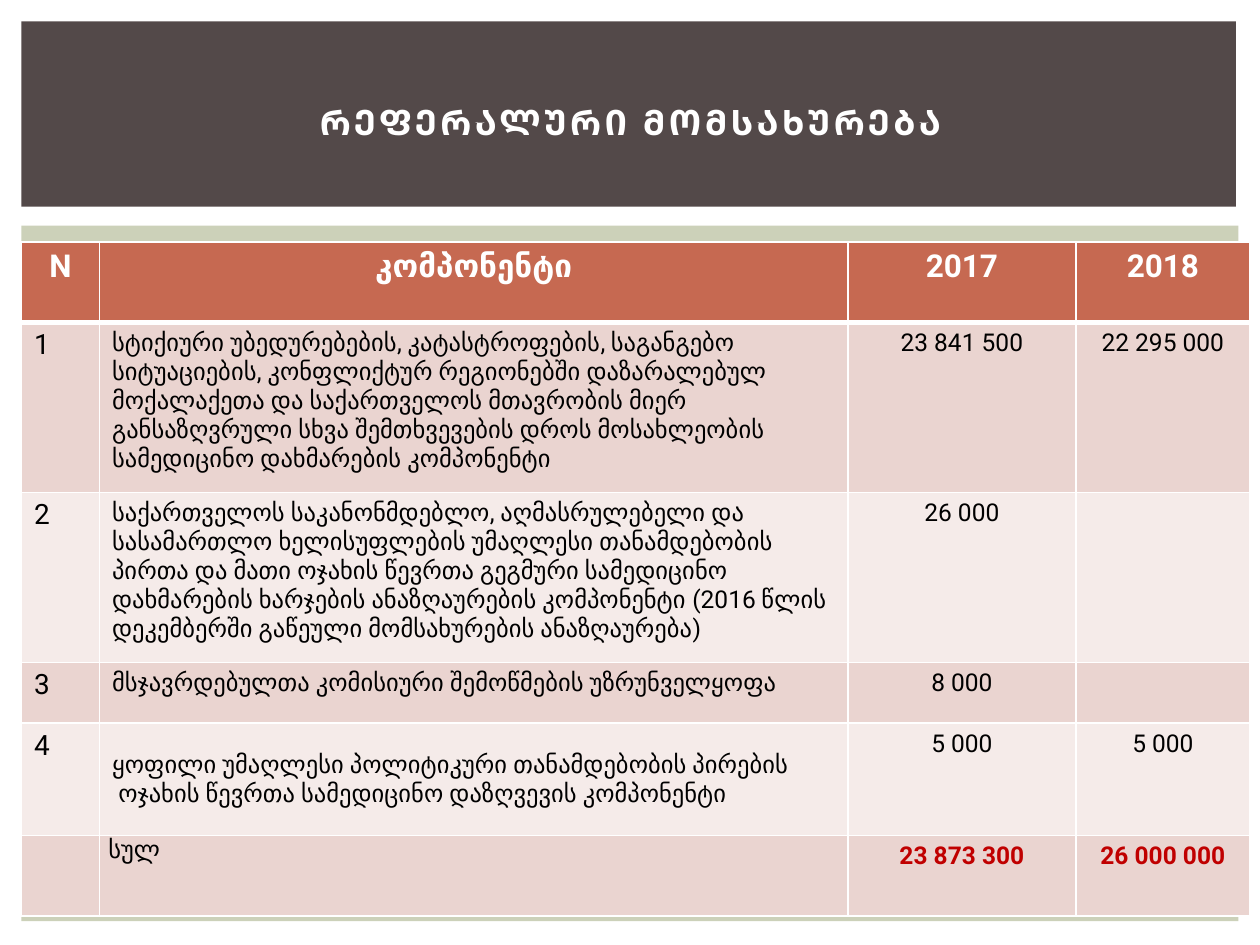
from lxml import etree
from pptx import Presentation, util as u
from pptx.dml.color import RGBColor
from pptx.enum import shapes, text
from pptx.oxml.ns import qn

WHITE = RGBColor(0xFF, 0xFF, 0xFF)
BLACK = RGBColor(0, 0, 0)
DARK = RGBColor(0x53, 0x49, 0x49)
SAGE = RGBColor(0xCC, 0xD1, 0xB9)
RUST = RGBColor(0xC6, 0x69, 0x51)
BANDS = (RGBColor(0xEA, 0xD4, 0xD0), RGBColor(0xF5, 0xEB, 0xE9))
RED = RGBColor(0xC0, 0, 0)
FONT = "Roboto"

COLUMNS = (0.62, 5.94, 1.81, 1.38)
ROW_HEIGHTS = (0.64, 1.35, 1.35, 0.48, 0.89, 0.64)
ROWS = (
    ("N", "კომპონენტი", "2017", "2018"),
    ("1", "სტიქიური უბედურებების, კატასტროფების, საგანგებო სიტუაციების, "
     "კონფლიქტურ რეგიონებში დაზარალებულ მოქალაქეთა და საქართველოს მთავრობის "
     "მიერ განსაზღვრული სხვა შემთხვევების დროს მოსახლეობის სამედიცინო "
     "დახმარების კომპონენტი", "23 841 500", "22 295 000"),
    ("2", "საქართველოს საკანონმდებლო, აღმასრულებელი და სასამართლო "
     "ხელისუფლების უმაღლესი თანამდებობის პირთა და მათი ოჯახის წევრთა გეგმური "
     "სამედიცინო დახმარების ხარჯების ანაზღაურების კომპონენტი (2016 წლის "
     "დეკემბერში გაწეული მომსახურების ანაზღაურება)", "26 000", ""),
    ("3", "მსჯავრდებულთა კომისიური შემოწმების უზრუნველყოფა", "8 000", ""),
    ("4", "ყოფილი უმაღლესი პოლიტიკური თანამდებობის პირების\n"
     "ოჯახის წევრთა სამედიცინო დაზღვევის კომპონენტი", "5 000", "5 000"),
    ("", "სულ", "23 873 300", "26 000 000"),
)


class SlideBuilder:
    def __init__(self, deck):
        self.page = deck.slides.add_slide(deck.slide_layouts[5])

    def style(self, para, size, color, bold=False, centred=False):
        font = para.font
        font.name, font.size, font.bold = FONT, u.Pt(size), bold
        font.color.rgb = color
        para.alignment = text.PP_ALIGN.CENTER if centred else text.PP_ALIGN.LEFT

    def panel(self, left, top, width, height, color):
        box = self.page.shapes.add_shape(
            shapes.MSO_SHAPE.RECTANGLE, u.Inches(left), u.Inches(top),
            u.Inches(width), u.Inches(height))
        box.shadow.inherit = False
        box.fill.solid()
        box.fill.fore_color.rgb = color
        box.line.fill.background()

    def title(self, words, left, top, width, height):
        box = self.page.shapes.title
        box.left, box.top = u.Inches(left), u.Inches(top)
        box.width, box.height = u.Inches(width), u.Inches(height)
        box.text_frame.vertical_anchor = text.MSO_ANCHOR.MIDDLE
        para = box.text_frame.paragraphs[0]
        span = para.add_run()
        span.text = words
        self.style(para, 20, WHITE, bold=True, centred=True)
        span.font._element.set("spc", "200")
        # Bring the title in front of the panels
        self.page.shapes._spTree.append(box._element)

    def borders(self, cell, top=1, bottom=1):
        properties = cell._tc.get_or_add_tcPr()
        for side, width in (("L", 1), ("R", 1), ("T", top), ("B", bottom)):
            line = etree.SubElement(properties, qn("a:ln" + side), w=str(u.Pt(width)))
            fill = etree.SubElement(line, qn("a:solidFill"))
            etree.SubElement(fill, qn("a:srgbClr"), val=str(WHITE))

    def cell(self, cell, words, row, column):
        header, total = row == 0, row == len(ROWS) - 1
        self.borders(cell, top=3 if row == 1 else 1, bottom=3 if header else 1)
        cell.fill.solid()
        cell.fill.fore_color.rgb = RUST if header else BANDS[(row - 1) % 2]
        cell.text = words
        for para in cell.text_frame.paragraphs:
            if header:
                self.style(para, 18, WHITE, bold=True, centred=True)
            elif column == 0:
                self.style(para, 16, BLACK)
            elif column == 1:
                self.style(para, 14, BLACK)
            else:
                self.style(para, 14, RED if total else BLACK, bold=total, centred=True)

    def table(self, left, top):
        frame = self.page.shapes.add_table(
            len(ROWS), len(COLUMNS), u.Inches(left), u.Inches(top),
            u.Inches(sum(COLUMNS)), u.Inches(sum(ROW_HEIGHTS)))
        grid = frame.table
        for column, width in zip(grid.columns, COLUMNS):
            column.width = u.Inches(width)
        for row, height in zip(grid.rows, ROW_HEIGHTS):
            row.height = u.Inches(height)
        for r, values in enumerate(ROWS):
            for c, words in enumerate(values):
                self.cell(grid.cell(r, c), words, r, c)
        return grid


def main():
    deck = Presentation()
    deck.slide_width, deck.slide_height = u.Inches(10), u.Inches(7.5)
    builder = SlideBuilder(deck)

    # Background panels and title
    builder.panel(0.17, 1.79, 9.66, 5.52, SAGE)
    builder.panel(0.17, 0.17, 9.64, 1.47, DARK)

    # Budget table
    grid = builder.table(0.17, 1.92)

    # Two-line component: centred vertically, second line slightly indented
    pension = grid.cell(4, 1)
    pension.vertical_anchor = text.MSO_ANCHOR.MIDDLE
    pension.margin_left = u.Inches(0.1)
    pension.margin_top = pension.margin_right = pension.margin_bottom = 0
    second = pension.text_frame.paragraphs[1]
    second._p.get_or_add_pPr().set("marL", str(u.Inches(0.05)))

    # Total row label
    total = grid.cell(5, 1)
    total.margin_left = total.margin_right = u.Inches(0.07)
    total.margin_top = total.margin_bottom = 0
    label = total.text_frame.paragraphs[0]
    label.space_before = label.space_after = u.Pt(1)

    builder.title("ᲠᲔᲤᲔᲠᲐᲚᲣᲠᲘ ᲛᲝᲛᲡᲐᲮᲣᲠᲔᲑᲐ", 0.42, 0.39, 9.17, 1.15)
    deck.save("out.pptx")


if __name__ == "__main__":
    main()
